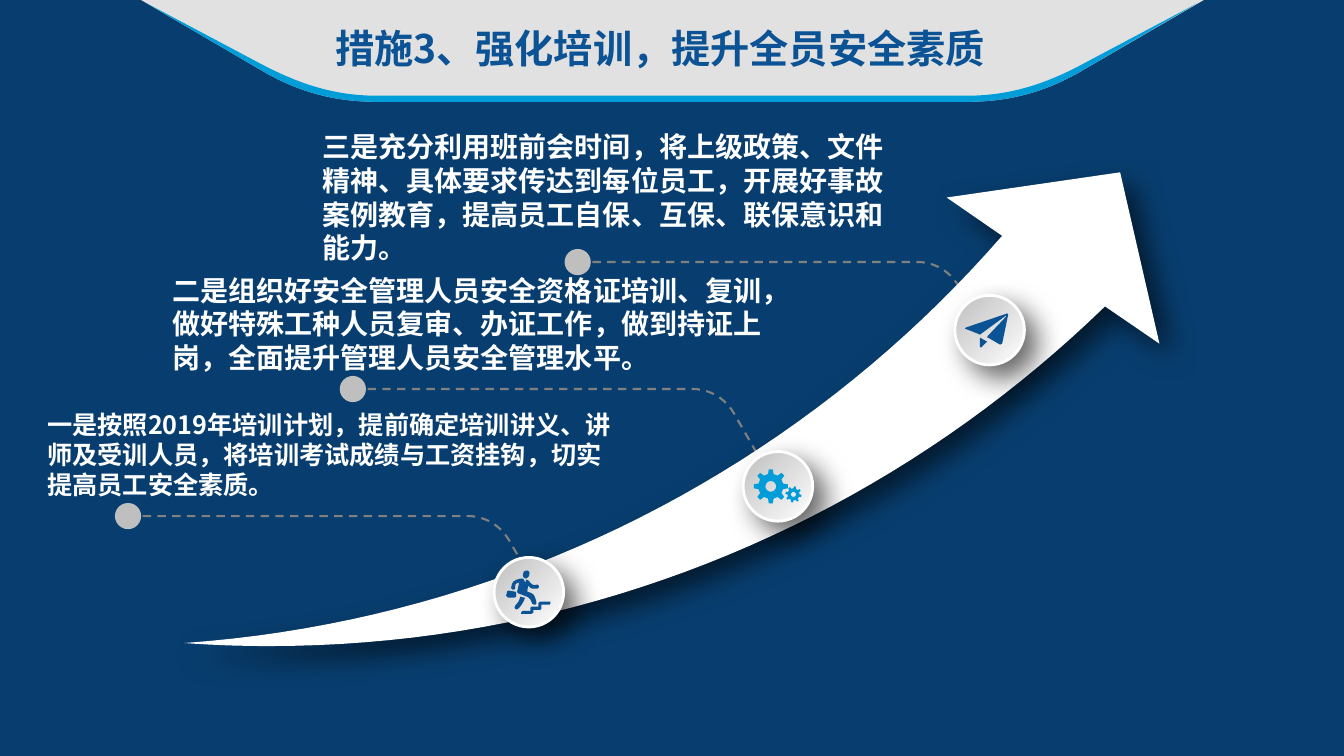
import math
import lxml.etree
import pptx
import pptx.dml.color
import pptx.enum.dml
import pptx.enum.shapes
import pptx.enum.text
import pptx.oxml.ns
import pptx.util

PX = 9144
RGB = pptx.dml.color.RGBColor
NAVY = RGB(0x08, 0x3E, 0x6F)
BLUE = RGB(0x0B, 0x53, 0x94)
CYAN = RGB(0x00, 0x9D, 0xD9)
PALE = RGB(0xE1, 0xE1, 0xE1)
SILVER = RGB(0xBF, 0xBF, 0xBF)
GRAY = RGB(0x80, 0x80, 0x80)
WHITE = RGB(0xFF, 0xFF, 0xFF)
FONT = "Noto Sans CJK SC"
OVAL = pptx.enum.shapes.MSO_SHAPE.OVAL
qn = pptx.oxml.ns.qn


def draw(host, loops, fill=None):
    pen = None
    for loop in loops:
        x, y = loop[0]
        if pen is None:
            pen = host.build_freeform(round(x * PX), round(y * PX), 1.0)
        else:
            pen.move_to(round(x * PX), round(y * PX))
        spots = []
        for step in loop[1:]:
            if len(step) == 2:
                spots.append(step)
            else:
                a, b, c, d, e, f = step
                count = max(4, min(40, round(math.dist((x, y), (e, f)) / 4)))
                for n in range(1, count + 1):
                    t = n / count
                    u = 1 - t
                    spots.append((
                        u**3 * x + 3 * u * u * t * a + 3 * u * t * t * c + t**3 * e,
                        u**3 * y + 3 * u * u * t * b + 3 * u * t * t * d + t**3 * f))
            x, y = step[-2:]
        pen.add_line_segments([(h * PX, v * PX) for h, v in spots], close=fill is not None)
    shape = pen.convert_to_shape()
    shape.shadow.inherit = False
    if fill is None:
        shape.fill.background()
    else:
        shape.fill.solid()
        shape.fill.fore_color.rgb = fill
        shape.line.fill.background()
    return shape


def shade(shape):
    shape.shadow.inherit = False
    effects = shape.element.spPr.find(qn("a:effectLst"))
    drop = lxml.etree.SubElement(effects, qn("a:outerShdw"), blurRad="254000",
                                 dist="152400", dir="2700000", algn="tl", rotWithShape="0")
    tone = lxml.etree.SubElement(drop, qn("a:srgbClr"), val="000000")
    lxml.etree.SubElement(tone, qn("a:alpha"), val="60000")


deck = pptx.Presentation()
deck.slide_width = 1333 * PX
deck.slide_height = 750 * PX
slide = deck.slides.add_slide(deck.slide_layouts[5])
slide.background.fill.solid()
slide.background.fill.fore_color.rgb = NAVY
shapes = slide.shapes
title = shapes.title

draw(shapes, [[(374, 101), (959, 101), (1002, 101, 1038, 91, 1075, 69), (1194, 0),
               (140, 0), (258, 69), (295, 91, 331, 101, 374, 101)]], PALE)
draw(shapes, [[(374, 101), (959, 101), (1002, 101, 1038, 91, 1075, 69), (1188, 3),
               (1075, 63), (1038, 83, 1002, 95, 959, 95), (374, 95),
               (331, 95, 296, 83, 258, 63), (145, 3), (258, 69),
               (295, 91, 331, 101, 374, 101)]], CYAN)
title.element.getparent().append(title.element)

for row in range(3):
    x, y = 573 - 223 * row, 260 + 126 * row
    lead = draw(shapes, [[(x, y), (x + 337, y), (x + 354, y, x + 369, y + 9, x + 378, y + 24),
                          (x + 406, y + 73)]])
    lead.line.color.rgb = GRAY
    lead.line.width = pptx.util.Pt(1.5)
    lead.line.dash_style = pptx.enum.dml.MSO_LINE.DASH
    dot = shapes.add_shape(OVAL, (x - 13) * PX, (y - 13) * PX, 26 * PX, 26 * PX)
    dot.shadow.inherit = False
    dot.fill.solid()
    dot.fill.fore_color.rgb = SILVER
    dot.line.fill.background()

arrow = draw(shapes, [[(1096, 304), (882, 512, 590, 641, 267, 641), (239, 641, 211, 640, 183, 638),
                       (506, 615, 794, 464, 994, 234), (939, 196), (1111, 171),
                       (1150, 341)]], WHITE)
shade(arrow)

runner = [
    [(519, 606), (526, 606), (526, 603), (527, 602), (534, 602), (534, 599),
     (534, 598, 535, 597, 536, 597), (546, 597), (546, 599), (545, 600), (537, 600),
     (537, 604), (536, 605), (529, 605), (529, 608), (527, 609), (517, 609), (517, 608),
     (517, 607, 518, 606, 519, 606)],
    [(504, 593), (510, 593), (512, 592), (512, 588), (511, 587), (504, 586), (503, 587),
     (502, 591), (504, 593)],
    [(511, 601), (514, 597, 515, 597, 516, 592), (520, 593), (521, 593),
     (518, 599, 518, 600, 514, 604), (512, 606, 509, 603, 511, 601)],
    [(523, 566), (524, 566, 526, 568, 525, 570), (525, 572, 523, 574, 521, 574),
     (519, 573, 518, 571, 519, 569), (519, 567, 521, 566, 523, 566)],
    [(522, 575), (524, 576), (529, 581, 528, 581, 533, 580), (535, 580, 535, 584, 533, 584),
     (528, 584, 527, 585, 524, 581), (523, 586), (523, 587),
     (529, 589, 530, 589, 532, 597), (533, 600, 530, 601, 528, 599),
     (525, 591, 524, 593, 515, 589), (514, 589, 513, 588, 513, 587), (515, 578),
     (511, 579, 511, 579, 511, 584), (510, 586, 507, 585, 507, 583),
     (508, 577, 509, 576, 516, 574), (519, 574), (521, 578), (522, 575)],
]
gears = []
for x, y, tip, root, hole, turn in ((764.5, 482.5, 17, 12.5, 5.3, 0), (787, 490.5, 8, 6, 2.5, 0.2)):
    rim = []
    for tooth in range(8):
        for reach, shift in ((root, -0.28), (tip, -0.15), (tip, 0.15), (root, 0.28)):
            turned = turn + (tooth + shift) * math.pi / 4
            rim.append((x + reach * math.cos(turned), y + reach * math.sin(turned)))
    gears.append(rim)
    gears.append([(x + hole * math.cos(n * math.pi / 12), y - hole * math.sin(n * math.pi / 12))
                  for n in range(24)])
plane = [
    [(972, 344), (973, 345), (979, 339), (972, 335)],
    [(999, 311), (958, 325), (957, 326), (967, 330), (972, 332), (998, 313), (998, 314),
     (980, 333), (979, 335), (980, 335), (992, 342), (994, 341), (1000, 312)],
]
for x, y, icon, tint in ((490, 553, runner, BLUE), (737, 448, gears, CYAN), (947, 293, plane, BLUE)):
    group = shapes.add_group_shape()
    badge = group.shapes.add_shape(OVAL, x * PX, y * PX, 69 * PX, 69 * PX)
    badge.fill.gradient()
    badge.fill.gradient_angle = 135
    for stop, tone in zip(badge.fill.gradient_stops, (WHITE, SILVER)):
        stop.color.rgb = tone
    for stop, place in zip(badge.fill.gradient_stops, (0, 1)):
        stop.position = place
    badge.line.color.rgb = WHITE
    badge.line.width = pptx.util.Pt(2)
    shade(badge)
    draw(group.shapes, icon, tint)

notes = (
    (37, 401, 581, 101, 18, "一是按照2019年培训计划，提前确定培训讲义、讲师及受训人员，将培训考试成绩与工资挂钩，切实提高员工安全素质。"),
    (161, 266, 625, 111, 20, "二是组织好安全管理人员安全资格证培训、复训，做好特殊工种人员复审、办证工作，做到持证上岗，全面提升管理人员安全管理水平。"),
    (310, 124, 604, 111, 20, "三是充分利用班前会时间，将上级政策、文件精神、具体要求传达到每位员工，开展好事故案例教育，提高员工自保、互保、联保意识和能力。"),
)
title.left, title.top, title.width, title.height = (n * PX for n in (293, 19, 723, 57))
texts = [(title, 28, BLUE, "措施3、强化培训，提升全员安全素质")]
for x, y, wide, high, size, words in notes:
    box = shapes.add_textbox(x * PX, y * PX, wide * PX, high * PX)
    texts.append((box, size, WHITE, words))
for box, size, tint, words in texts:
    frame = box.text_frame
    frame.text = words
    frame.word_wrap = True
    frame.auto_size = pptx.enum.text.MSO_AUTO_SIZE.SHAPE_TO_FIT_TEXT
    font = frame.paragraphs[0].font
    font.size = pptx.util.Pt(size)
    font.bold = True
    font.color.rgb = tint
    font.name = FONT
    lxml.etree.SubElement(font._element, qn("a:ea"), typeface=FONT)
title.text_frame.paragraphs[0].alignment = pptx.enum.text.PP_ALIGN.CENTER

deck.save("out.pptx")
